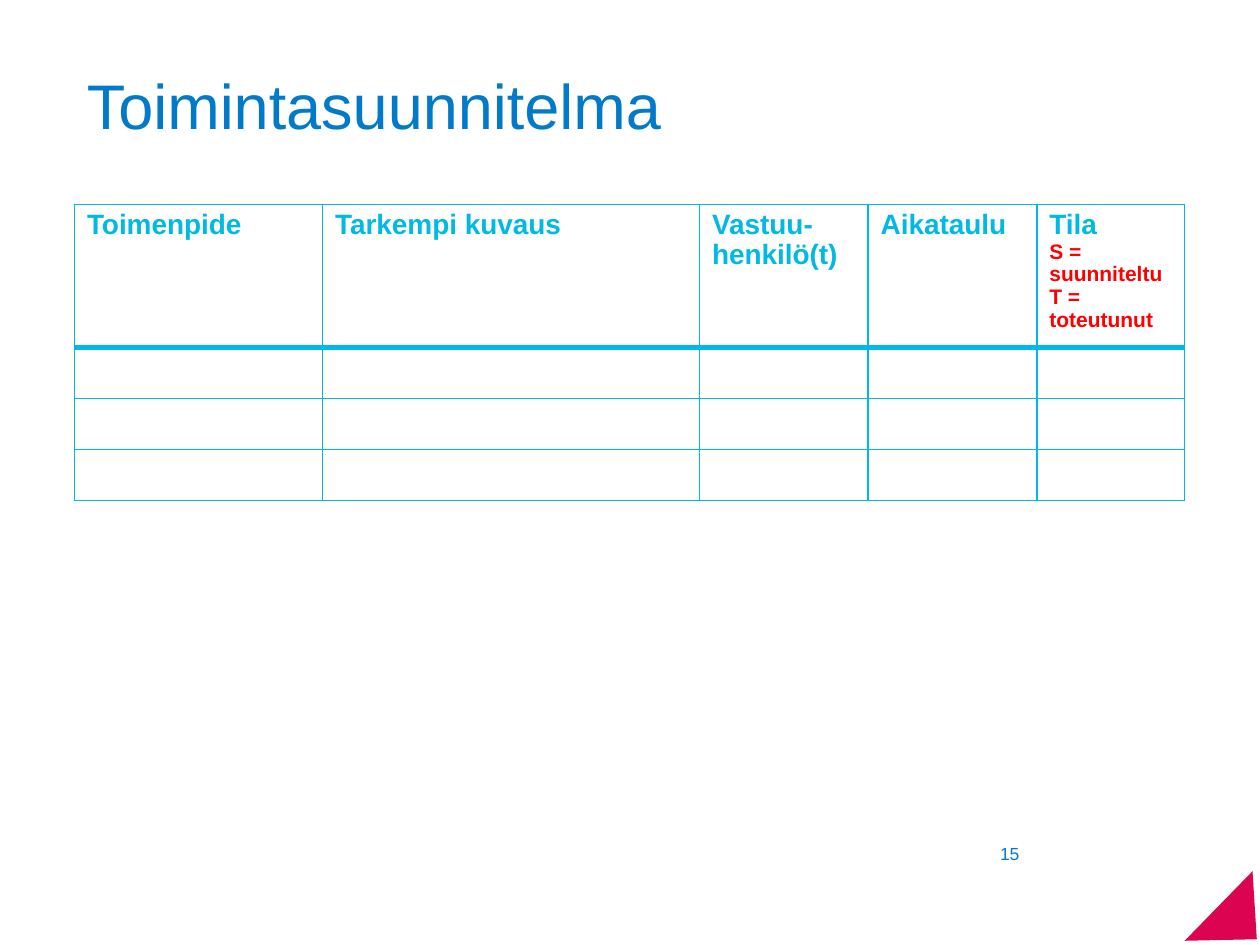
"""Build the action plan slide with its empty planning table."""
from dataclasses import dataclass

from lxml.etree import SubElement
from pptx import Presentation
from pptx.dml.color import RGBColor as Color
from pptx.enum.shapes import MSO_SHAPE as Shape
from pptx.enum.text import MSO_ANCHOR as Anchor
from pptx.oxml.ns import qn
from pptx.util import Cm, Pt

TITLE = "Toimintasuunnitelma"
PAGE_NUMBER = "15"
COLUMNS = [
    ("Toimenpide", 5.0),
    ("Tarkempi kuvaus", 7.6),
    ("Vastuu-henkilö(t)", 3.4),
    ("Aikataulu", 3.4),
    ("Tila", 2.98),
]
STATUS_KEY = "S = suunniteltu T = toteutunut"
EMPTY_ROWS = 3
HEADER_HEIGHT, ROW_HEIGHT = 2.78, 1.03
LEFT, WIDTH = 1.5, 22.38


@dataclass(frozen=True)
class Theme:
    font: str = "Arial"
    blue: str = "007AC9"
    cyan: str = "00B9E4"
    red: str = "FF0000"
    crimson: str = "DC0451"
    title_size: int = 36
    header_size: int = 16
    key_size: int = 12
    number_size: int = 10
    thin: int = 1
    thick: int = 3


THEME = Theme()


def style(para, size, color, spacing, bold=False):
    para.line_spacing = spacing
    for span in para.runs:
        span.font.name = THEME.font
        span.font.size = Pt(size)
        span.font.bold = bold
        span.font.color.rgb = Color.from_string(color)


def add_text(page, text, place, size, anchor):
    box = page.shapes.add_textbox(*map(Cm, place))
    frame = box.text_frame
    frame.word_wrap = True
    frame.vertical_anchor = anchor
    frame.text = text
    style(frame.paragraphs[0], size, THEME.blue, 0.9)


def set_borders(cell, top, bottom):
    cell.fill.background()
    properties = cell._tc.get_or_add_tcPr()
    widths = {"lnL": THEME.thin, "lnR": THEME.thin, "lnT": top, "lnB": bottom}
    for position, (side, width) in enumerate(widths.items()):
        line = SubElement(properties, qn(f"a:{side}"), w=str(Pt(width)))
        fill = SubElement(line, qn("a:solidFill"))
        SubElement(fill, qn("a:srgbClr"), val=THEME.cyan)
        properties.insert(position, line)


def add_plan(page):
    heights = [HEADER_HEIGHT] + [ROW_HEIGHT] * EMPTY_ROWS
    place = map(Cm, (LEFT, 4.12, WIDTH, sum(heights)))
    table = page.shapes.add_table(len(heights), len(COLUMNS), *place).table
    table.first_row = table.horz_banding = False
    for row, height in zip(table.rows, heights):
        row.height = Cm(height)
    for index, (heading, width) in enumerate(COLUMNS):
        table.columns[index].width = Cm(width)
        frame = table.cell(0, index).text_frame
        frame.text = heading
        style(frame.paragraphs[0], THEME.header_size, THEME.cyan, 0.97, True)
    key = frame.add_paragraph()
    key.text = STATUS_KEY
    style(key, THEME.key_size, THEME.red, 0.97, True)
    for number, row in enumerate(table.rows):
        top = THEME.thick if number == 1 else THEME.thin
        bottom = THEME.thick if number == 0 else THEME.thin
        for cell in row.cells:
            set_borders(cell, top, bottom)


def add_corner(page):
    corner = page.shapes.add_shape(
        Shape.ISOSCELES_TRIANGLE, Cm(23.95), Cm(18.11), Cm(1.96), Cm(1.02))
    corner.adjustments[0] = 0.47
    corner.rotation = 134.3
    corner.shadow.inherit = False
    corner.fill.solid()
    corner.fill.fore_color.rgb = Color.from_string(THEME.crimson)
    corner.line.fill.background()


def main():
    deck = Presentation()
    deck.slide_width, deck.slide_height = Cm(25.4), Cm(19.05)
    page = deck.slides.add_slide(deck.slide_layouts[6])
    add_text(page, TITLE, (LEFT, 0.71, WIDTH, 3), THEME.title_size, Anchor.MIDDLE)
    add_plan(page)
    add_text(page, PAGE_NUMBER, (19.91, 16.92, 1.4, 0.58), THEME.number_size, Anchor.TOP)
    add_corner(page)
    deck.save("out.pptx")


if __name__ == "__main__":
    main()
